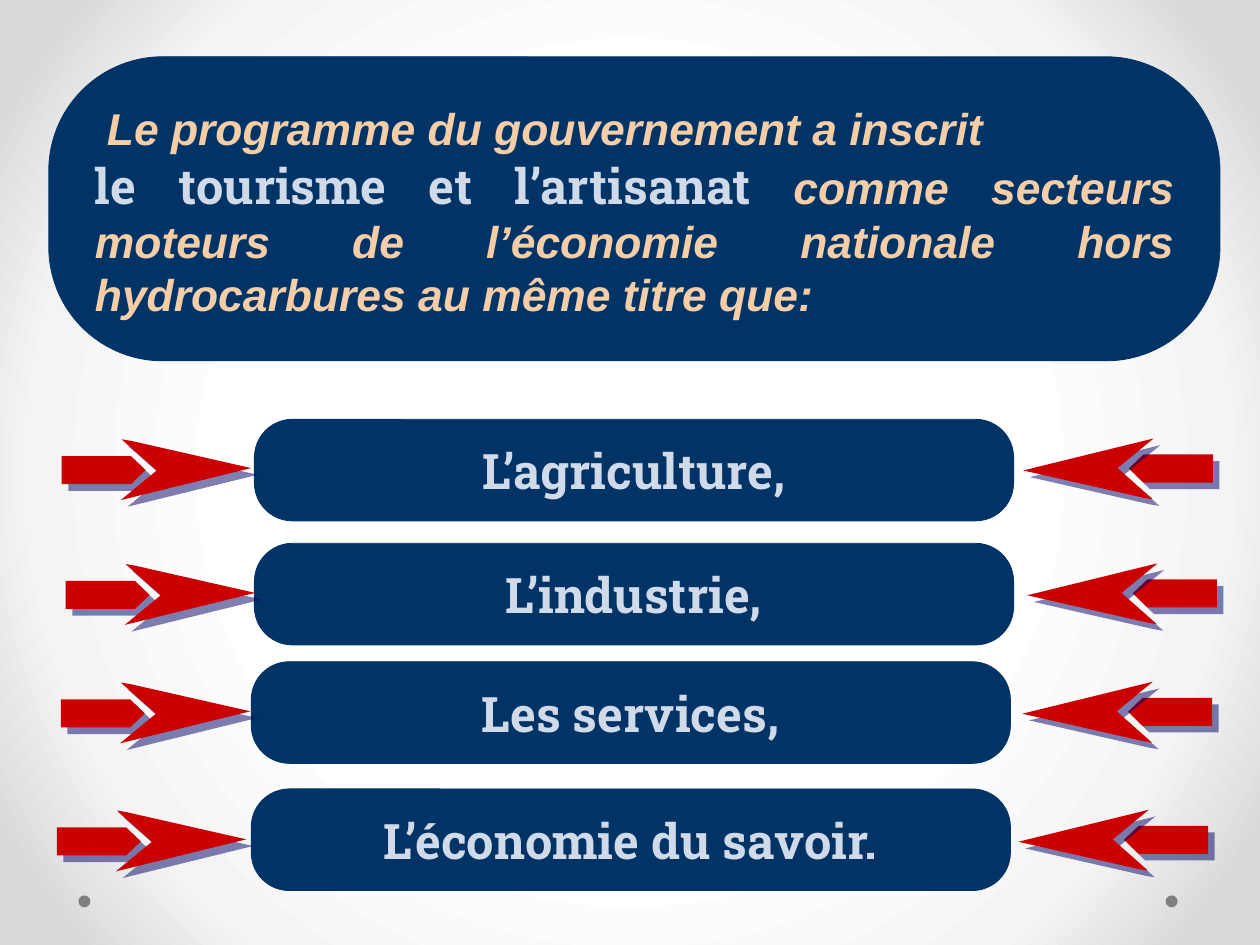
from lxml import etree
from pptx import Presentation
from pptx.dml.color import RGBColor
from pptx.enum.shapes import MSO_SHAPE as Shape
from pptx.enum.text import MSO_ANCHOR as Anchor, PP_ALIGN as Align
from pptx.oxml import parse_xml
from pptx.oxml.ns import nsdecls, qn
from pptx.util import Inches, Pt


def paint(shape, color, line=None):
    shape.shadow.inherit = False
    shape.fill.solid()
    shape.fill.fore_color.rgb = RGBColor.from_string(color)
    if line:
        shape.line.color.rgb = RGBColor.from_string(line)
        shape.line.width = Pt(0.75)
    else:
        shape.line.fill.background()


def add_panel(left, top, width, height):
    panel = slide.shapes.add_shape(
        Shape.ROUNDED_RECTANGLE, Inches(left), Inches(top), Inches(width), Inches(height))
    panel.adjustments[0] = 0.375
    paint(panel, "003366", "003366")
    frame = panel.text_frame
    frame.word_wrap = True
    frame.vertical_anchor = Anchor.MIDDLE
    frame.margin_left = frame.margin_right = Inches(0.16)
    frame.margin_top = frame.margin_bottom = Inches(0.08)
    return frame


presentation = Presentation()
presentation.slide_width = Inches(15.75)
presentation.slide_height = Inches(11.81)
slide = presentation.slides.add_slide(presentation.slide_layouts[6])

slide.background.fill.gradient()
gradient = slide.background._cSld.find(".//" + qn("a:gradFill"))
stops = "".join(
    f'<a:gs pos="{position}000"><a:srgbClr val="{color}"/></a:gs>'
    for position, color in [(50, "FFFFFF"), (76, "F4F4F4"), (92, "DADADA")])
gradient.getparent().replace(gradient, parse_xml(
    f'<a:gradFill {nsdecls("a")} rotWithShape="1"><a:gsLst>{stops}</a:gsLst><a:path path="circle">'
    '<a:fillToRect l="50000" t="50000" r="50000" b="50000"/></a:path></a:gradFill>'))

for left in (14.57, 0.98):
    dot = slide.shapes.add_shape(
        Shape.OVAL, Inches(left), Inches(11.19), Inches(0.15), Inches(0.15))
    paint(dot, "808080")

styles = {
    "sector": ("Roboto Slab", 44, "D1DAE9", False),
    "statement": ("Arial", 40, "F5CEA7", True),
}
introduction = [
    (Align.LEFT, [("sector", " "), ("statement", "Le programme du gouvernement a inscrit")]),
    (Align.JUSTIFY, [
        ("sector", "le"), ("statement", " "), ("sector", "tourisme et l’artisanat "),
        ("statement", "comme secteurs moteurs de l’économie nationale hors "
                      "hydrocarbures au même titre que:")]),
]
frame = add_panel(0.61, 0.71, 14.64, 3.8)
for index, (alignment, pieces) in enumerate(introduction):
    paragraph = frame.add_paragraph() if index else frame.paragraphs[0]
    paragraph.alignment = alignment
    paragraph.font.bold = True
    for style, text in pieces:
        run = paragraph.add_run()
        run.text = text
        run.font.name, size, color, run.font.italic = styles[style]
        run.font.size = Pt(size)
        run.font.bold = True
        run.font.color.rgb = RGBColor.from_string(color)

sectors = [
    ("L’agriculture,", 3.18, 5.24, 0, 0),
    ("L’industrie,", 3.18, 6.79, 0.05, 1.56),
    ("Les services,", 3.14, 8.27, -0.01, 3.04),
    ("L’économie du savoir.", 3.14, 9.86, -0.06, 4.64),
]
arrowhead = [(1.52, 5.49), (1.64, 5.51), (3.14, 5.85), (1.51, 6.25), (1.96, 5.88)]
mirror_x, mirror_y = 15.93, 11.73
tail_left, tail_top, tail_width, tail_height = 0.77, 5.7, 1.05, 0.35

for text, left, top, shift_x, shift_y in sectors:
    paragraph = add_panel(left, top, 9.49, 1.27).paragraphs[0]
    paragraph.text = text
    paragraph.alignment = Align.CENTER
    font = paragraph.font
    font.name, font.size, font.bold = "Roboto Slab", Pt(44), True
    font.color.rgb = RGBColor.from_string("D1DAE9")

    for points_left in (False, True):
        x, y, points = tail_left, tail_top, arrowhead
        if points_left:
            x, y = mirror_x - x - tail_width, mirror_y - y - tail_height
            points = [(mirror_x - px, mirror_y - py) for px, py in arrowhead]
        arrow = slide.shapes.add_group_shape()
        tail = arrow.shapes.add_shape(
            Shape.PENTAGON, Inches(x + shift_x), Inches(y + shift_y),
            Inches(tail_width), Inches(tail_height))
        tail.adjustments[0] = 0.522
        tail.rotation = 180 if points_left else 0
        outline = [(Inches(px + shift_x), Inches(py + shift_y)) for px, py in points]
        builder = arrow.shapes.build_freeform(*outline[0])
        builder.add_line_segments(outline[1:], close=True)
        head = builder.convert_to_shape()
        for part in (tail, head):
            paint(part, "CC0000")
            effects = part._element.spPr.find(qn("a:effectLst"))
            shadow = etree.SubElement(
                effects, qn("a:outerShdw"), dist=str(Pt(8.5)), dir="2700000",
                algn="ctr", rotWithShape="0")
            shadow_color = etree.SubElement(shadow, qn("a:srgbClr"), val="000066")
            etree.SubElement(shadow_color, qn("a:alpha"), val="50000")

presentation.save("out.pptx")
